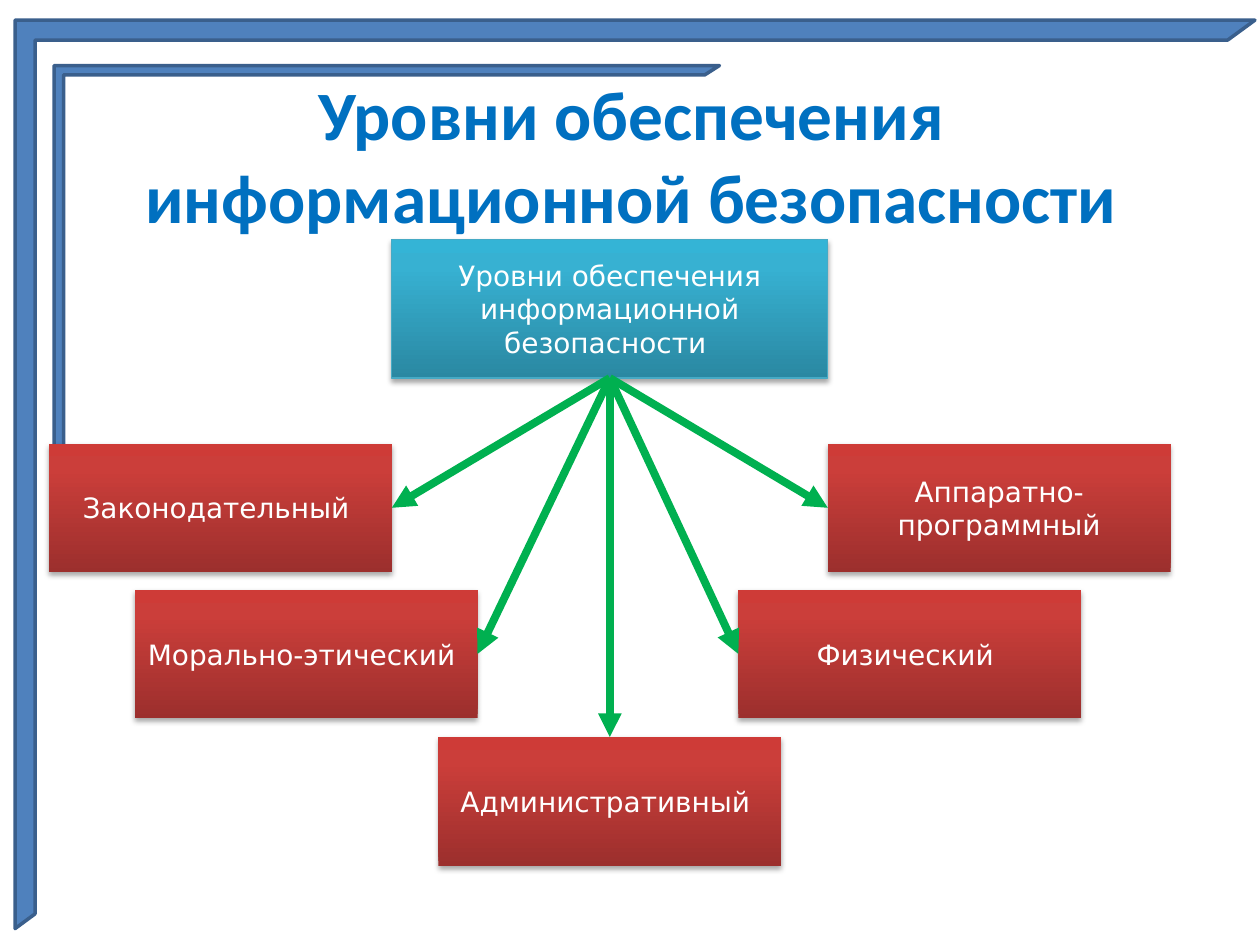
from lxml.etree import SubElement
from pptx import Presentation
from pptx.dml.color import RGBColor
from pptx.enum.shapes import MSO_CONNECTOR, MSO_SHAPE
from pptx.enum.text import MSO_ANCHOR, PP_ALIGN
from pptx.oxml import parse_xml
from pptx.oxml.ns import nsdecls, qn
from pptx.util import Inches, Pt

BLUE = RGBColor(0x4F, 0x81, 0xBD)
NAVY = RGBColor(0x3A, 0x5F, 0x8C)
AZURE = RGBColor(0x00, 0x70, 0xC0)
WHITE = RGBColor(0xFF, 0xFF, 0xFF)
GREEN = RGBColor(0x00, 0xB0, 0x50)
TEAL = RGBColor(0x46, 0xAA, 0xC5)
TEALS = [RGBColor(0x2A, 0x88, 0xA2), RGBColor(0x37, 0xB1, 0xD2), RGBColor(0x34, 0xB4, 0xD6)]
REDS = [RGBColor(0x9C, 0x2F, 0x2D), RGBColor(0xCB, 0x3E, 0x3A), RGBColor(0xCE, 0x3B, 0x37)]
STOPS = [0, 80, 100]


def put_text(shape, text, *, size=16, font="DejaVu Sans", color=WHITE, bold=False):
    frame = shape.text_frame
    frame.word_wrap = True
    frame.vertical_anchor = MSO_ANCHOR.MIDDLE
    para = frame.paragraphs[0]
    para.alignment = PP_ALIGN.CENTER
    run = para.add_run()
    run.text = text
    run.font.size = Pt(size)
    run.font.name = font
    run.font.bold = bold
    run.font.color.rgb = color


def add_box(left, top, width, height, text, tones, edge=None):
    """Add a captioned rectangle with a three-stop gradient and a soft shadow."""
    box = shapes.add_shape(MSO_SHAPE.RECTANGLE, Inches(left), Inches(top),
                           Inches(width), Inches(height))
    box.fill.gradient()
    box.fill.gradient_angle = 90
    stops = next(box.element.iter(qn("a:gsLst")))
    for old in list(stops):
        stops.remove(old)
    for pos, tone in zip(STOPS, tones):
        stop = SubElement(stops, qn("a:gs"), pos=str(pos * 1000))
        SubElement(stop, qn("a:srgbClr"), val=str(tone))
    if edge:
        box.line.color.rgb = edge
        box.line.width = Pt(0.75)
    else:
        box.line.fill.background()
    box.shadow.inherit = False
    effects = next(box.element.iter(qn("a:effectLst")))
    effects.append(parse_xml(
        f'<a:outerShdw {nsdecls("a")} blurRad="{Pt(3.1)}" dist="{Pt(1.8)}" dir="5400000" '
        'rotWithShape="0"><a:srgbClr val="000000"><a:alpha val="35000"/></a:srgbClr>'
        '</a:outerShdw>'))
    put_text(box, text)
    return box


deck = Presentation()
deck.slide_width, deck.slide_height = Inches(10), Inches(7.5)
slide = deck.slides.add_slide(deck.slide_layouts[5])
shapes = slide.shapes

# Corner frames, behind the title
for left, top, width, height in [(0.43, 0.52, 5.28, 3.39), (0.12, 0.16, 9.84, 7.21)]:
    corner = shapes.add_shape(MSO_SHAPE.HALF_FRAME, Inches(left), Inches(top),
                              Inches(width), Inches(height))
    corner.adjustments[0] = corner.adjustments[1] = 0.022
    corner.fill.solid()
    corner.fill.fore_color.rgb = BLUE
    corner.line.color.rgb = NAVY
    corner.line.width = Pt(2)
    corner.shadow.inherit = False

title = shapes.title
title.left, title.top = Inches(0.51), Inches(0.6)
title.width, title.height = Inches(9), Inches(1.25)
put_text(title, "Уровни обеспечения информационной безопасности",
         size=39.6, font="Calibri", color=AZURE, bold=True)
title.element.getparent().append(title.element)

# Root box, its levels, and an arrow to each level
root = add_box(3.11, 1.9, 3.46, 1.1, "Уровни обеспечения информационной безопасности ",
               TEALS, TEAL)
TOP, LEFT, BOTTOM, RIGHT = range(4)  # connection sites of a rectangle
levels = [
    (0.39, 3.52, "Законодательный ", RIGHT),
    (1.07, 4.68, "Морально-этический ", RIGHT),
    (3.48, 5.85, "Административный ", TOP),
    (5.86, 4.68, "Физический ", LEFT),
    (6.57, 3.52, "Аппаратно-программный", LEFT),
]
for left, top, text, site in levels:
    box = add_box(left, top, 2.72, 1.02, text, REDS)
    arrow = shapes.add_connector(MSO_CONNECTOR.STRAIGHT, 0, 0, 0, 0)
    arrow.begin_connect(root, BOTTOM)
    arrow.end_connect(box, site)
    arrow.line.color.rgb = GREEN
    arrow.line.width = Pt(4.5)
    SubElement(arrow.line._get_or_add_ln(), qn("a:tailEnd"), type="triangle")
    SubElement(arrow.element.spPr, qn("a:effectLst"))

deck.save("out.pptx")
